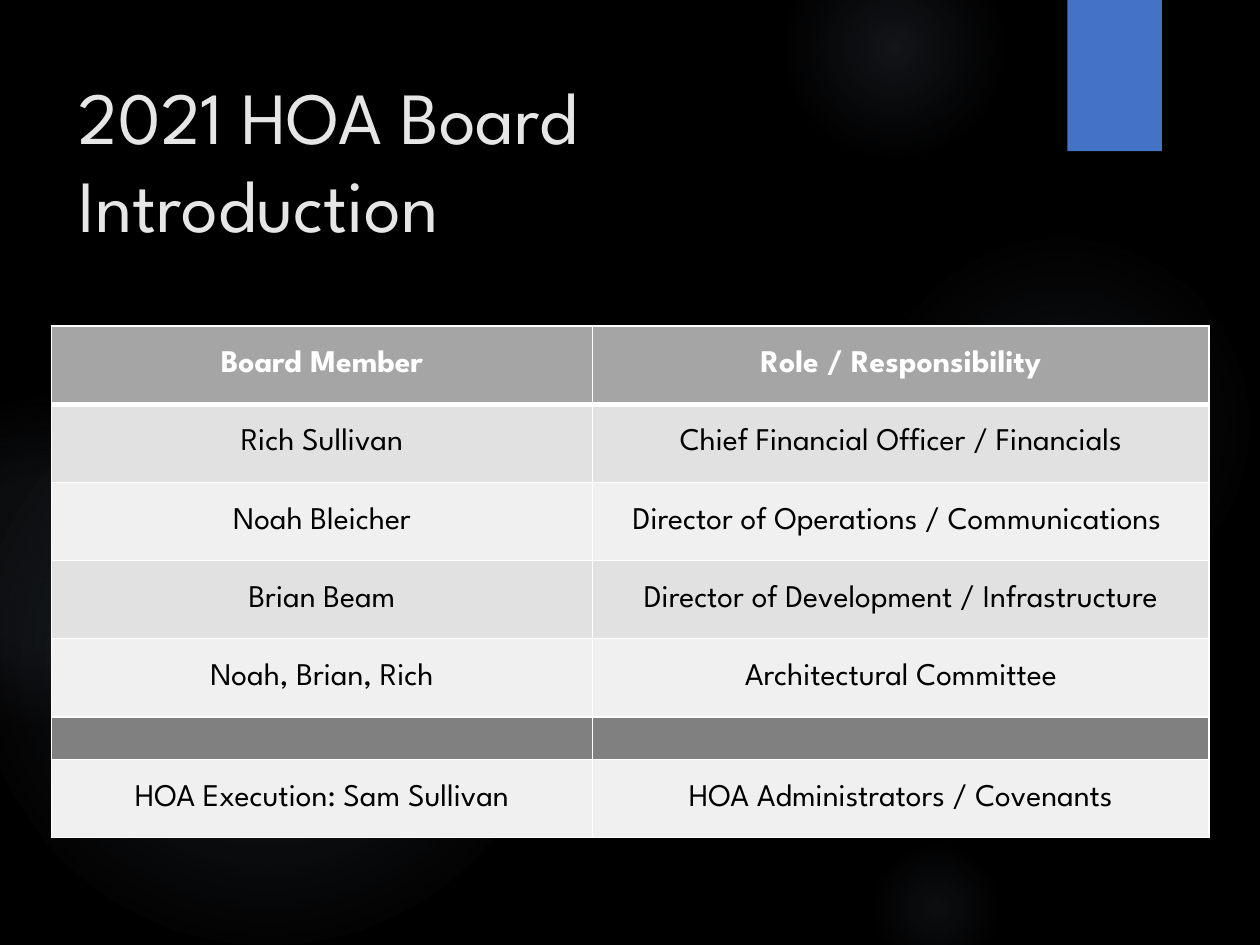
from lxml.etree import SubElement
from pptx import Presentation
from pptx.dml.color import RGBColor
from pptx.enum.shapes import MSO_SHAPE
from pptx.enum.text import MSO_ANCHOR, PP_ALIGN
from pptx.oxml import parse_xml
from pptx.oxml.ns import nsdecls, qn
from pptx.util import Pt


def color(value):
    return RGBColor.from_string(value)


def apply_format(target, values):
    for name, value in values.items():
        setattr(target, name, value)


FONT = "League Spartan"
deck = Presentation()
apply_format(deck, {"slide_width": Pt(720), "slide_height": Pt(540)})
page = deck.slides.add_slide(deck.slide_layouts[6])
page.background.fill.solid()
page.background.fill.fore_color.rgb = color("000000")

glows = [
    (496, 132, 222, [(0, 7), (36, 6), (69, 0)]),
    (448, -36, 126, [(0, 14), (36, 7), (73, 0)]),
    (496, 480, 78, [(0, 9), (36, 5), (66, 0)]),
    (-12, 210, 330, [(0, 11), (36, 10), (75, 0)]),
    (-66, 228, 186, [(0, 8), (36, 8), (72, 0)]),
]
for left, top, size, stops in glows:
    glow = page.shapes.add_shape(MSO_SHAPE.OVAL, Pt(left), Pt(top), Pt(size), Pt(size))
    glow.shadow.inherit = False
    glow.line.fill.background()
    glow.fill.background()
    stop_xml = "".join(
        f'<a:gs pos="{position * 1000}"><a:srgbClr val="8497B0">'
        f'<a:alpha val="{alpha * 1000}"/></a:srgbClr></a:gs>'
        for position, alpha in stops
    )
    gradient = parse_xml(
        f'<a:gradFill {nsdecls("a")}><a:gsLst>{stop_xml}</a:gsLst><a:path path="circle">'
        '<a:fillToRect l="50000" t="50000" r="50000" b="50000"/></a:path></a:gradFill>'
    )
    properties = glow.element.spPr
    properties.replace(properties.find(qn("a:noFill")), gradient)

ribbon = page.shapes.add_shape(MSO_SHAPE.RECTANGLE, Pt(610), Pt(0), Pt(54), Pt(86.4))
ribbon.shadow.inherit = False
ribbon.fill.solid()
ribbon.fill.fore_color.rgb = color("4472C4")
ribbon.line.fill.background()

title = page.shapes.add_textbox(Pt(38), Pt(36), Pt(556), Pt(110)).text_frame
apply_format(title, {"word_wrap": True, "vertical_anchor": MSO_ANCHOR.MIDDLE})
para = title.paragraphs[0]
para.text = "2021 HOA Board\vIntroduction"
para.line_spacing = Pt(50.3)
for span in para.runs:
    apply_format(span.font, {"name": FONT, "size": Pt(42)})
    span.font.color.rgb = color("E7E6E6")

rows = [
    ("Board Member", "Role / Responsibility", "A5A5A5"),
    ("Rich Sullivan", "Chief Financial Officer / Financials", "E1E1E1"),
    ("Noah Bleicher", "Director of Operations / Communications ", "F0F0F0"),
    ("Brian Beam", "Director of Development / Infrastructure", "E1E1E1"),
    ("Noah, Brian, Rich", "Architectural Committee", "F0F0F0"),
    ("", "", "808080"),
    ("HOA Execution: Sam Sullivan", "HOA Administrators / Covenants", "F0F0F0"),
]
table = page.shapes.add_table(
    len(rows), 2, Pt(29.3), Pt(186.3), Pt(661.7), Pt(292.5)
).table
for column, width in zip(table.columns, (309.4, 352.3)):
    column.width = Pt(width)

for row_index, (member, role, fill) in enumerate(rows):
    header = row_index == 0
    table.rows[row_index].height = Pt(44.7 if member else 24.3)
    for column_index, text in enumerate((member, role)):
        cell = table.cell(row_index, column_index)
        cell.vertical_anchor = MSO_ANCHOR.MIDDLE
        cell.fill.solid()
        cell.fill.fore_color.rgb = color(fill)
        if text:
            para = cell.text_frame.paragraphs[0]
            para.alignment = PP_ALIGN.CENTER
            span = para.add_run()
            span.text = text
            apply_format(span.font, {"name": FONT, "size": Pt(18), "bold": header})
            span.font.color.rgb = color("FFFFFF" if header else "000000")
        else:
            apply_format(cell, {"margin_top": 0, "margin_bottom": 0})
        cell_properties = cell._tc.get_or_add_tcPr()
        for order, side in enumerate(("lnL", "lnR", "lnT", "lnB")):
            thick = (row_index, side) in ((0, "lnB"), (1, "lnT"))
            border = parse_xml(f'<a:{side} {nsdecls("a")} w="{Pt(3 if thick else 1)}"/>')
            paint = SubElement(border, qn("a:solidFill"))
            SubElement(paint, qn("a:srgbClr"), val="FFFFFF")
            cell_properties.insert(order, border)

deck.save("out.pptx")
